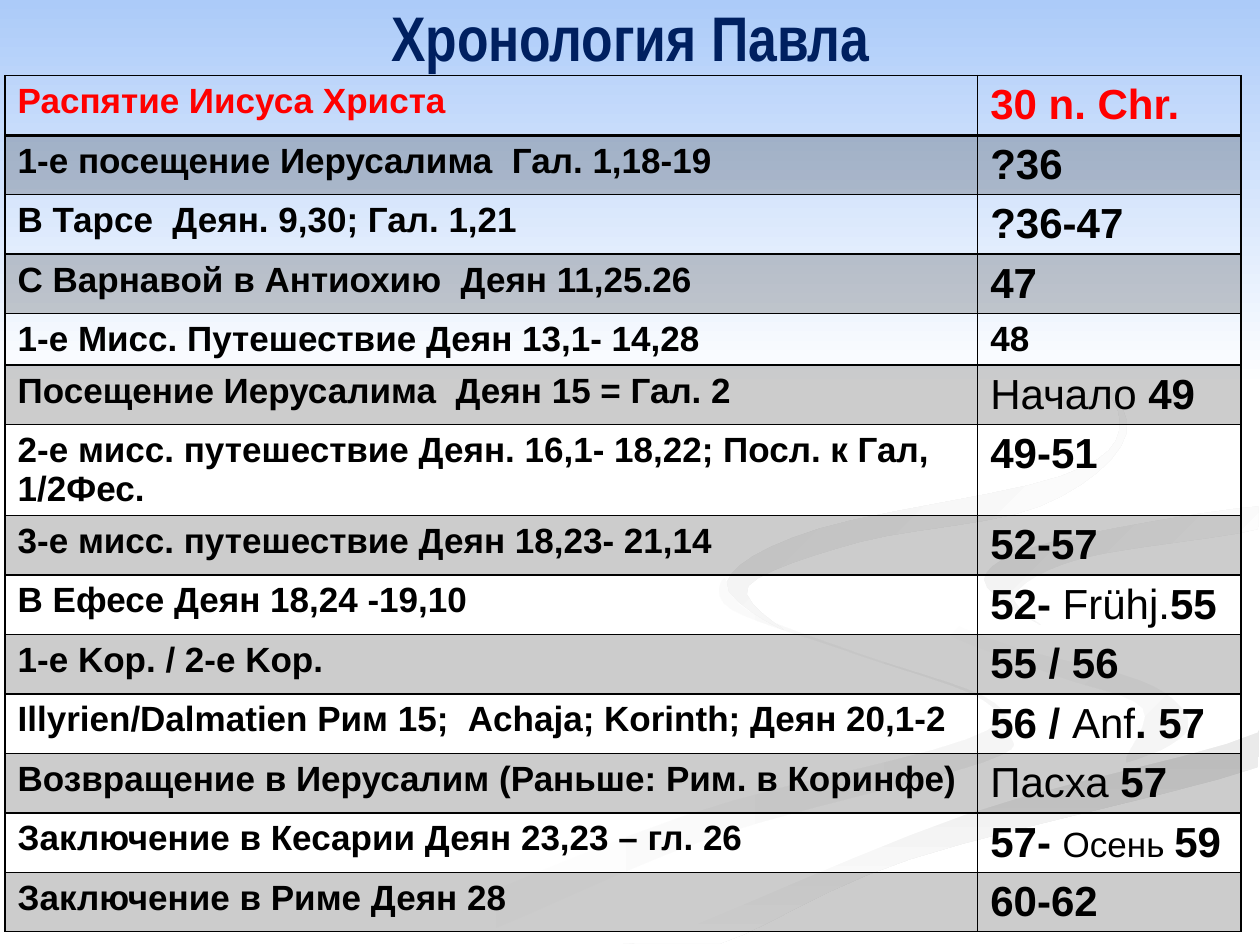
from dataclasses import dataclass

from lxml.etree import SubElement
from pptx import Presentation
from pptx.dml.color import RGBColor
from pptx.enum.shapes import MSO_SHAPE
from pptx.enum.text import MSO_ANCHOR, MSO_AUTO_SIZE, PP_ALIGN
from pptx.oxml.ns import qn
from pptx.util import Inches, Pt


@dataclass(frozen=True)
class Theme:
    title_color: str = "002060"
    text_color: str = "000000"
    accent_color: str = "FF0000"
    sky: str = "ACCBF9"
    white: str = "FFFFFF"
    title_font: str = "Arial Narrow"
    body_font: str = "Arial"
    title_size: int = 36
    event_size: int = 20
    date_size: int = 24
    band_alpha: int = 20


THEME = Theme()

# Background ribbons: first colour, last colour, gradient angle, bends in inches
RIBBONS = [
    ("FFFFFF", "F5F5F5", 0, [
        (7.81, 5.53), (6.82, 5.19), (5.94, 4.85), (5.75, 4.59), (5.81, 4.84), (6.79, 5.19),
        (7.81, 5.56), (7.67, 5.87), (5.39, 6.49), (3, 7.49), (3.61, 7.49), (5.64, 6.65),
        (7.8, 6.05), (8, 5.81)]),
    ("FFFFFF", "F5F5F5", 45, [
        (9.43, 5.7), (9.05, 5.4), (7.92, 5.09), (7.24, 4.64), (7.46, 5), (8.38, 5.36),
        (9.07, 5.62), (8.94, 6.05), (9.32, 5.89)]),
    ("EAEAEA", "FFFFFF", 90, [
        (5.03, 7.49), (5.71, 7.49), (7.22, 6.82), (9.98, 6.09), (9.98, 5.81), (7.64, 6.47)]),
    ("FFFFFF", "FFFFFF", 0, [
        (7.25, 4.64), (7.75, 5.03), (9.05, 5.4), (9.43, 5.7), (9.02, 6.03), (6.63, 6.68),
        (4.77, 7.49), (5.19, 7.47), (7.65, 6.47), (9.99, 5.81), (9.99, 5.38), (8.66, 5.09),
        (7.81, 4.63), (8.35, 4.3), (9.99, 4.02), (9.99, 3.87), (8.08, 4.17)]),
    ("F1F1F1", "FFFFFF", 45, [
        (7.81, 4.6), (8.26, 4.96), (8.05, 4.72), (8.59, 4.43), (9.98, 4.2), (9.98, 4.02),
        (8.35, 4.3)]),
    ("EDEDED", "FFFFFF", 45, [
        (6.83, 4.3), (8.25, 4.02), (8.94, 3.44), (8.54, 2.83), (7.62, 2.33), (8.46, 2.79),
        (8.89, 3.35), (8.42, 3.78), (6.49, 4.2), (5.77, 4.62), (6.22, 5), (5.94, 4.65)]),
]

BIG, SMALL = THEME.date_size, THEME.event_size

# Event, then the runs of its date: text, size, bold
CHRONOLOGY = [
    ("Распятие Иисуса Христа", [("30 n. Chr.", BIG, True)]),
    ("1-е посещение Иерусалима  Гал. 1,18-19", [("?36", BIG, True)]),
    ("В Тарсе  Деян. 9,30; Гал. 1,21", [("?36-47", BIG, True)]),
    ("С Варнавой в Антиохию  Деян 11,25.26", [("47", BIG, True)]),
    ("1-е Мисс. Путешествие Деян 13,1- 14,28", [("48", SMALL, True)]),
    ("Посещение Иерусалима  Деян 15 = Гал. 2", [("Начало", BIG, False), (" 49", BIG, True)]),
    ("2-е мисс. путешествие Деян. 16,1- 18,22; Посл. к Гал, 1/2Фес.", [("49-51", BIG, True)]),
    ("3-е мисс. путешествие Деян 18,23- 21,14", [("52-57", BIG, True)]),
    ("В Ефесе Деян 18,24 -19,10",
     [("52- ", BIG, True), ("Frühj.", BIG, False), ("55", BIG, True)]),
    ("1-е Koр. / 2-е Koр.", [("55 / 56", BIG, True)]),
    ("Illyrien/Dalmatien Рим 15;  Achaja; Korinth; Деян 20,1-2",
     [("56 / ", BIG, True), ("Anf", BIG, False), (". 57", BIG, True)]),
    ("Возвращение в Иерусалим (Раньше: Рим. в Коринфе)",
     [("Пасха", BIG, False), (" 57", BIG, True)]),
    ("Заключение в Кесарии Деян 23,23 – гл. 26",
     [("57- ", BIG, True), ("Осень ", SMALL, False), ("59", BIG, True)]),
    ("Заключение в Риме Деян 28", [("60-62", BIG, True)]),
]


def add_run(paragraph, text, size, color, font=THEME.body_font, bold=True):
    run = paragraph.add_run()
    run.text = text
    run.font.name, run.font.size, run.font.bold = font, Pt(size), bold
    run.font.color.rgb = RGBColor.from_string(color)


def paint(shape, first, last, angle):
    shape.shadow.inherit = False
    shape.line.fill.background()
    shape.fill.gradient()
    shape.fill.gradient_angle = 360 - angle
    for stop, color in zip(shape.fill.gradient_stops, (first, last)):
        stop.color.rgb = RGBColor.from_string(color)


def smooth_outline(bends, steps=6):
    """Round a closed outline with a Catmull-Rom curve, kept on the slide."""
    points = []
    for index in range(len(bends)):
        neighbours = [bends[(index + shift) % len(bends)] for shift in (-1, 0, 1, 2)]
        for step in range(steps):
            t = step / steps
            x, y = (b + t / 2 * (c - a + t * (2 * a - 5 * b + 4 * c - d
                                              + t * (3 * (b - c) + d - a)))
                    for a, b, c, d in zip(*neighbours))
            points.append((Inches(min(x, 9.99)), Inches(min(y, 7.49))))
    return points


def add_background(slide):
    for first, last, angle, bends in RIBBONS:
        points = smooth_outline(bends)
        builder = slide.shapes.build_freeform(*points[0])
        builder.add_line_segments(points[1:], close=True)
        paint(builder.convert_to_shape(), first, last, angle)
    sky = slide.shapes.add_shape(MSO_SHAPE.RECTANGLE, 0, 0, Inches(10), Inches(3.08))
    paint(sky, THEME.sky, THEME.white, 90)


def set_title(slide, text):
    title = slide.shapes.title
    title.left, title.top = Inches(0.2), Inches(0.05)
    title.width, title.height = Inches(9.61), Inches(0.47)
    frame = title.text_frame
    frame.auto_size = MSO_AUTO_SIZE.NONE
    frame.vertical_anchor = MSO_ANCHOR.MIDDLE
    paragraph = frame.paragraphs[0]
    paragraph.alignment = PP_ALIGN.CENTER
    add_run(paragraph, text, THEME.title_size, THEME.title_color, THEME.title_font)
    # Bring the title in front of the background
    slide.shapes._spTree.append(title._element)


def set_borders(cell, **widths):
    properties = cell._tc.get_or_add_tcPr()
    for side in ("lnL", "lnR", "lnT", "lnB"):
        line = SubElement(properties, qn(f"a:{side}"), w=str(Pt(widths.get(side, 1))))
        SubElement(SubElement(line, qn("a:solidFill")), qn("a:srgbClr"), val=THEME.text_color)


def set_band(cell, shaded):
    if not shaded:
        cell.fill.background()
        return
    cell.fill.solid()
    cell.fill.fore_color.rgb = RGBColor.from_string(THEME.text_color)
    color = cell._tc.tcPr.find(qn("a:solidFill"))[0]
    SubElement(color, qn("a:alpha"), val=str(THEME.band_alpha * 1000))


def add_chronology(slide):
    row_height = Inches(0.41)
    table = slide.shapes.add_table(len(CHRONOLOGY), 2, Inches(0.04), Inches(0.6),
                                   Inches(9.81), row_height * len(CHRONOLOGY)).table
    table.horz_banding = False
    table.columns[0].width, table.columns[1].width = Inches(7.72), Inches(2.09)
    for index, (event, date_runs) in enumerate(CHRONOLOGY):
        table.rows[index].height = row_height
        color = THEME.text_color if index else THEME.accent_color
        for column, runs in enumerate(([(event, THEME.event_size, True)], date_runs)):
            cell = table.cell(index, column)
            for text, size, bold in runs:
                add_run(cell.text_frame.paragraphs[0], text, size, color, bold=bold)
            # The first row is closed by a heavier rule
            set_borders(cell, lnT=2 if index == 1 else 1, lnB=1 if index else 2)
            set_band(cell, index % 2 == 1)


def main():
    presentation = Presentation()
    presentation.slide_width, presentation.slide_height = Inches(10), Inches(7.5)
    slide = presentation.slides.add_slide(presentation.slide_layouts[5])
    add_background(slide)
    set_title(slide, "Хронология Павла")
    add_chronology(slide)
    presentation.save("out.pptx")


if __name__ == "__main__":
    main()
